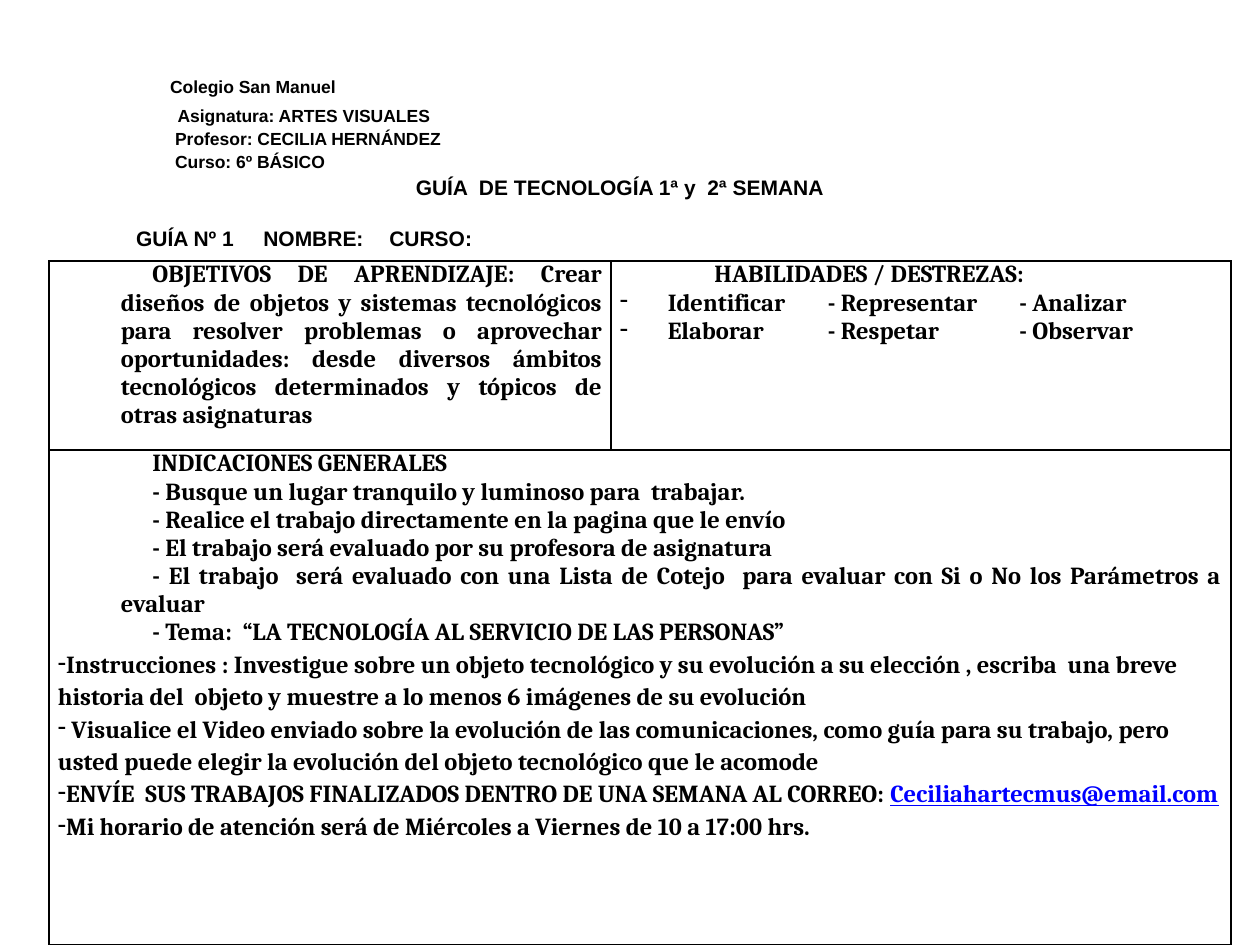
"""Build a school worksheet slide with a heading block and a guidelines table."""
from dataclasses import dataclass, replace

from lxml.etree import SubElement
from pptx import Presentation
from pptx.dml.color import RGBColor
from pptx.enum.text import MSO_ANCHOR, PP_ALIGN
from pptx.oxml import parse_xml
from pptx.oxml.ns import nsdecls, qn
from pptx.util import Inches, Pt

BLACK = RGBColor(0x00, 0x00, 0x00)
BLUE = RGBColor(0x00, 0x00, 0xFF)


@dataclass(frozen=True)
class Line:
    text: str
    size: float = 14
    font: str = "Cambria"
    margin: float = 0
    indent: float = 0
    before: float = 0
    spacing: float = 1.0
    align: PP_ALIGN = PP_ALIGN.LEFT
    bullet: str = ""
    tabs: tuple[float, ...] = ()
    address: str = ""


HEADING = Line("", size=10, font="Arial")
BODY = Line("", margin=0.5, indent=0.25, align=PP_ALIGN.JUSTIFY)
SKILL = Line("", margin=0.38, indent=-0.38, align=PP_ALIGN.JUSTIFY, bullet="-", tabs=(1.65, 3.17))
TASK = Line("", spacing=1.15, bullet="-")

HEADINGS = [
    replace(HEADING, text="Colegio San Manuel", indent=0.76),
    replace(HEADING, text="Asignatura: ARTES VISUALES", indent=0.82, before=5),
    replace(HEADING, text="Profesor: CECILIA HERNÁNDEZ", indent=0.8, before=1),
    replace(HEADING, text="Curso: 6º BÁSICO", indent=0.8, before=1),
    replace(HEADING, text="GUÍA  DE TECNOLOGÍA 1ª y  2ª SEMANA", size=12, indent=2.71, before=1.5),
    replace(HEADING, text="GUÍA Nº 1\tNOMBRE:\tCURSO:", size=12, indent=0.49, before=15,
            tabs=(1.46, 6.68)),
]
OBJECTIVES = [
    replace(BODY, text="OBJETIVOS DE APRENDIZAJE: Crear diseños de objetos y sistemas tecnológicos "
            "para resolver problemas o aprovechar oportunidades: desde diversos ámbitos "
            "tecnológicos determinados y tópicos de otras asignaturas"),
]
SKILLS = [
    replace(BODY, text="HABILIDADES / DESTREZAS:"),
    replace(SKILL, text="Identificar\t- Representar\t- Analizar"),
    replace(SKILL, text="Elaborar\t- Respetar\t- Observar"),
]
GUIDELINES = [replace(BODY, text=text) for text in (
    "INDICACIONES GENERALES",
    "- Busque un lugar tranquilo y luminoso para  trabajar.",
    "- Realice el trabajo directamente en la pagina que le envío",
    "- El trabajo será evaluado por su profesora de asignatura",
    "- El trabajo  será evaluado con una Lista de Cotejo  para evaluar con Si o No "
    "los Parámetros a evaluar",
    "- Tema:  “LA TECNOLOGÍA AL SERVICIO DE LAS PERSONAS”",
)]
TASKS = [
    replace(TASK, text="Instrucciones : Investigue sobre un objeto tecnológico y su evolución a su "
            "elección , escriba  una breve historia del  objeto y muestre a lo menos 6 imágenes "
            "de su evolución"),
    replace(TASK, text=" Visualice el Video enviado sobre la evolución de las comunicaciones, como "
            "guía para su trabajo, pero usted puede elegir la evolución del objeto tecnológico "
            "que le acomode"),
    replace(TASK, text="ENVÍE  SUS TRABAJOS FINALIZADOS DENTRO DE UNA SEMANA AL CORREO: ",
            address="Ceciliahartecmus@email.com"),
    replace(TASK, text="Mi horario de atención será de Miércoles a Viernes de 10 a 17:00 hrs."),
]


def add_run(paragraph, text: str, line: Line, color: RGBColor, underline: bool = False) -> None:
    run = paragraph.add_run()
    run.text = text
    formats = {"name": line.font, "size": Pt(line.size), "bold": True, "underline": underline}
    for attribute, value in formats.items():
        setattr(run.font, attribute, value)
    run.font.color.rgb = color


def write_lines(frame, lines: list[Line]) -> None:
    for index, line in enumerate(lines):
        paragraph = frame.add_paragraph() if index else frame.paragraphs[0]
        formats = {"alignment": line.align, "line_spacing": line.spacing,
                   "space_before": Pt(line.before)}
        for attribute, value in formats.items():
            setattr(paragraph, attribute, value)
        properties = paragraph._p.get_or_add_pPr()
        properties.set("marL", str(Inches(line.margin)))
        properties.set("indent", str(Inches(line.indent)))
        if line.bullet:
            SubElement(properties, qn("a:buChar"), char=line.bullet)
        if line.tabs:
            stops = SubElement(properties, qn("a:tabLst"))
            for stop in line.tabs:
                SubElement(stops, qn("a:tab"), pos=str(Inches(stop)), algn="l")
        add_run(paragraph, line.text, line, BLACK)
        if line.address:
            add_run(paragraph, line.address, line, BLUE, underline=True)


def format_cell(cell) -> None:
    formats = {"margin_left": Inches(0.07), "margin_right": Inches(0.07),
               "margin_top": 0, "margin_bottom": 0, "vertical_anchor": MSO_ANCHOR.TOP}
    for attribute, value in formats.items():
        setattr(cell, attribute, value)
    cell.fill.background()
    properties = cell._tc.get_or_add_tcPr()
    for position, side in enumerate(("lnL", "lnR", "lnT", "lnB")):
        properties.insert(position, parse_xml(
            f'<a:{side} {nsdecls("a")} w="{Pt(1)}"><a:solidFill>'
            f'<a:srgbClr val="{BLACK}"/></a:solidFill></a:{side}>'))


def add_headings(slide) -> None:
    frame = slide.shapes.add_textbox(Inches(0.59), Inches(0.6), Inches(8), Inches(1.4)).text_frame
    formats = {"margin_left": 0, "margin_right": 0, "margin_top": 0, "margin_bottom": 0,
               "word_wrap": True}
    for attribute, value in formats.items():
        setattr(frame, attribute, value)
    write_lines(frame, HEADINGS)


def add_guide(slide) -> None:
    widths, heights = (4.46, 4.92), (1.5, 3.93)
    guide = slide.shapes.add_table(2, 2, Inches(0.39), Inches(2.07),
                                   Inches(sum(widths)), Inches(sum(heights))).table
    guide.first_row = guide.horz_banding = False
    for column, width in zip(guide.columns, widths):
        column.width = Inches(width)
    for row, height in zip(guide.rows, heights):
        row.height = Inches(height)
    for cell in guide.iter_cells():
        format_cell(cell)
    guide.cell(1, 0).merge(guide.cell(1, 1))
    write_lines(guide.cell(0, 0).text_frame, OBJECTIVES)
    write_lines(guide.cell(0, 1).text_frame, SKILLS)
    write_lines(guide.cell(1, 0).text_frame, GUIDELINES + TASKS)


def main() -> None:
    presentation = Presentation()
    presentation.slide_width, presentation.slide_height = Inches(10), Inches(7.5)
    slide = presentation.slides.add_slide(presentation.slide_layouts[6])
    add_guide(slide)
    add_headings(slide)
    presentation.save("out.pptx")


if __name__ == "__main__":
    main()
